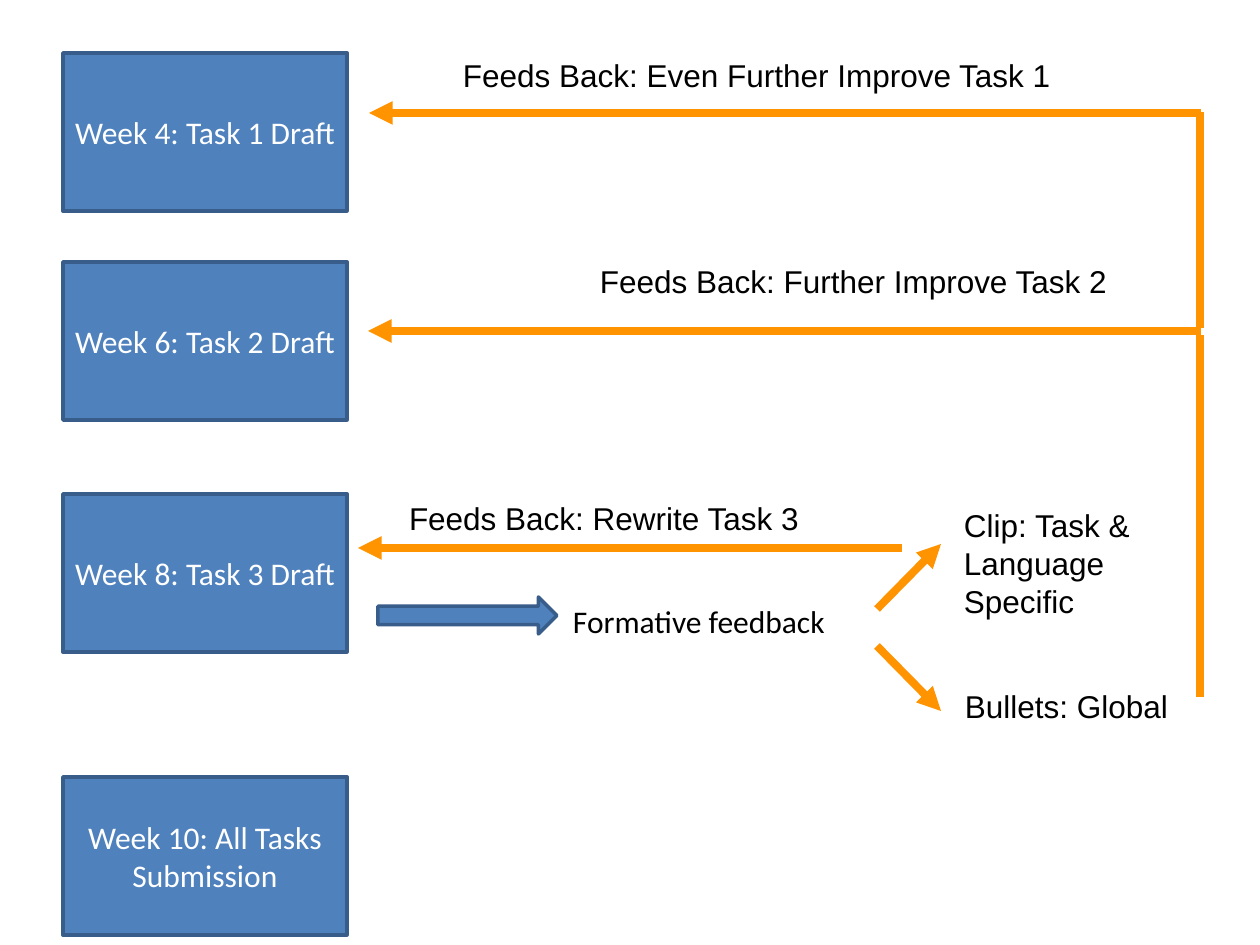
from lxml import etree
from pptx import Presentation, util as u
from pptx.dml.color import RGBColor
from pptx.enum import shapes, text
from pptx.oxml.ns import qn

PX = 914400 / 126
COLORS = {"box": "4F81BD", "edge": "385D8A", "arrow": "FF9300",
          "white": "FFFFFF", "black": "000000"}

deck = Presentation()
deck.slide_width, deck.slide_height = round(1260 * PX), round(945 * PX)
page = deck.slides.add_slide(deck.slide_layouts[6])


def write(box, words, font="Arial", color="black", inset=6, wrap=False,
          align=text.PP_ALIGN.LEFT, anchor=text.MSO_ANCHOR.TOP):
    frame = box.text_frame
    frame.word_wrap = wrap
    frame.vertical_anchor = anchor
    frame.margin_left = frame.margin_right = round(inset * PX)
    frame.margin_top = frame.margin_bottom = round(inset * PX)
    for index, line in enumerate(words.split("\n")):
        para = frame.add_paragraph() if index else frame.paragraphs[0]
        para.alignment = align
        span = para.add_run()
        span.text = line
        span.font.name = font
        span.font.size = u.Pt(18)
        span.font.color.rgb = RGBColor.from_string(COLORS[color])


def add_block(kind, left, top, width, height):
    block = page.shapes.add_shape(kind, *(round(v * PX) for v in (left, top, width, height)))
    block.shadow.inherit = False
    block.fill.solid()
    block.fill.fore_color.rgb = RGBColor.from_string(COLORS["box"])
    block.line.color.rgb = RGBColor.from_string(COLORS["edge"])
    block.line.width = u.Pt(2)
    return block


# Weekly task boxes
weeks = [
    (53, "Week 4: Task 1 Draft"),
    (262, "Week 6: Task 2 Draft"),
    (494, "Week 8: Task 3 Draft"),
    (777, "Week 10: All Tasks Submission"),
]
for top, words in weeks:
    week = add_block(shapes.MSO_SHAPE.RECTANGLE, 63, top, 284, 158)
    write(week, words, font="Calibri", color="white", inset=0, wrap=True,
          align=text.PP_ALIGN.CENTER, anchor=text.MSO_ANCHOR.MIDDLE)

# Block arrow from the third draft to its feedback
add_block(shapes.MSO_SHAPE.RIGHT_ARROW, 378, 597, 179, 37)

# Feedback lines: start x, start y, end x, end y, arrowhead
lines = [
    (877, 609, 941, 544, True),
    (877, 646, 941, 711, True),
    (902, 548, 358, 548, True),
    (1201, 331, 368, 331, True),
    (1200, 697, 1200, 335, False),
    (1200, 328, 1200, 112, False),
    (1201, 113, 369, 113, True),
]
for *ends, has_head in lines:
    line = page.shapes.add_connector(shapes.MSO_CONNECTOR.STRAIGHT,
                                     *(round(v * PX) for v in ends))
    line.line.color.rgb = RGBColor.from_string(COLORS["arrow"])
    line.line.width = u.Pt(4.5)
    if has_head:
        etree.SubElement(line.line._get_or_add_ln(), qn("a:tailEnd"), type="triangle")
    etree.SubElement(line._element.spPr, qn("a:effectLst"))

# Labels: left, top, width, height, words, font
labels = [
    (567, 596, 315, 49, "Formative feedback", "Calibri"),
    (958, 500, 202, 122, "Clip: Task &\nLanguage\nSpecific", "Arial"),
    (403, 493, 486, 48, "Feeds Back: Rewrite Task 3", "Arial"),
    (959, 681, 218, 48, "Bullets: Global", "Arial"),
    (594, 256, 522, 48, "Feeds Back: Further Improve Task 2", "Arial"),
    (457, 50, 602, 48, "Feeds Back: Even Further Improve Task 1", "Arial"),
]
for *place, words, font in labels:
    label = page.shapes.add_textbox(*(round(v * PX) for v in place))
    write(label, words, font=font)

deck.save("out.pptx")
